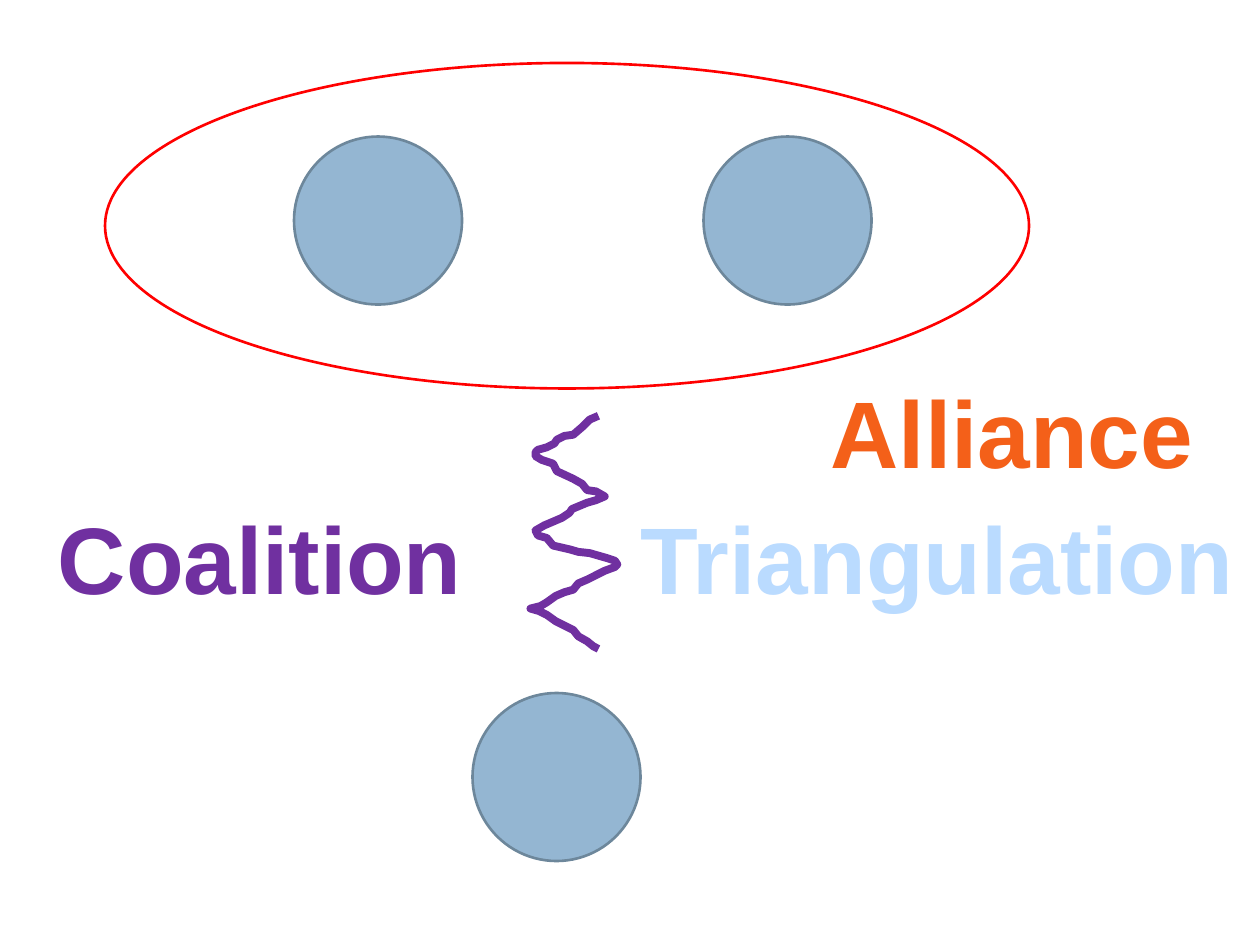
from pptx import Presentation, util as u
from pptx.dml.color import RGBColor
from pptx.enum import shapes, text

COLORS = {
    "person": "94B6D2",
    "person_edge": "6D879B",
    "boundary": "FF0000",
    "coalition": "7030A0",
    "alliance": "F46019",
    "triangulation": "BADBFF",
}

presentation = Presentation()
presentation.slide_width = u.Inches(10)
presentation.slide_height = u.Inches(7.5)
slide = presentation.slides.add_slide(presentation.slide_layouts[6])

# Grid of 120 columns by 90 rows
CELL = presentation.slide_width // 120


def color(name):
    return RGBColor.from_string(COLORS[name])


def add_ellipse(column, row, columns, rows, edge):
    """Add an unfilled ellipse placed in grid cells."""
    ellipse = slide.shapes.add_shape(
        shapes.MSO_SHAPE.OVAL, column * CELL, row * CELL, columns * CELL, rows * CELL
    )
    ellipse.shadow.inherit = False
    ellipse.fill.background()
    ellipse.line.color.rgb = color(edge)
    ellipse.line.width = u.Pt(1.5)
    return ellipse


# Three people, two of them inside a shared boundary
for column, row in [(28, 13), (67, 13), (45, 66)]:
    person = add_ellipse(column, row, 16, 16, "person_edge")
    person.fill.solid()
    person.fill.fore_color.rgb = color("person")
add_ellipse(10, 6, 88, 31, "boundary")

# Jagged conflict line, in hundredths of an inch
conflict_points = [
    (475, 330), (468, 333), (462, 339), (455, 345), (448, 346), (442, 349),
    (440, 352), (434, 355), (427, 357), (425, 359), (425, 362), (430, 365),
    (439, 368), (442, 374), (455, 380), (462, 384), (466, 389), (473, 390),
    (480, 394), (473, 397), (466, 399), (454, 404), (452, 407), (446, 411),
    (432, 417), (425, 421), (427, 425), (434, 427), (439, 433), (452, 436),
    (459, 438), (468, 439), (482, 443), (488, 445), (490, 448), (488, 450),
    (480, 453), (466, 460), (459, 463), (455, 468), (448, 470), (441, 473),
    (434, 478), (429, 481), (421, 483), (428, 485), (434, 488), (441, 493),
    (455, 500), (459, 505), (466, 509), (471, 513), (475, 515),
]
builder = slide.shapes.build_freeform(*conflict_points[0], scale=u.Inches(0.01))
builder.add_line_segments(conflict_points[1:], close=False)
conflict = builder.convert_to_shape()
conflict.shadow.inherit = False
conflict.fill.background()
conflict.line.color.rgb = color("coalition")
conflict.line.width = u.Pt(4.5)

# Labels: wording, column, row, columns, wrap, colour
labels = [
    ("Triangulation", 59.5, 47, 59.5, False, "triangulation"),
    ("Coalition ", 4, 47, 44, True, "coalition"),
    ("Alliance", 77.75, 35, 37.25, False, "alliance"),
]
for wording, column, row, columns, wrap, name in labels:
    label = slide.shapes.add_textbox(
        int(column * CELL), row * CELL, int(columns * CELL), 12 * CELL
    )
    frame = label.text_frame
    frame.word_wrap = wrap
    frame.auto_size = text.MSO_AUTO_SIZE.SHAPE_TO_FIT_TEXT
    paragraph = frame.paragraphs[0]
    paragraph.alignment = text.PP_ALIGN.CENTER
    run = paragraph.add_run()
    run.text = wording
    run.font.name = "Arial"
    run.font.size = u.Pt(54)
    run.font.bold = True
    run.font.color.rgb = color(name)

presentation.save("out.pptx")
